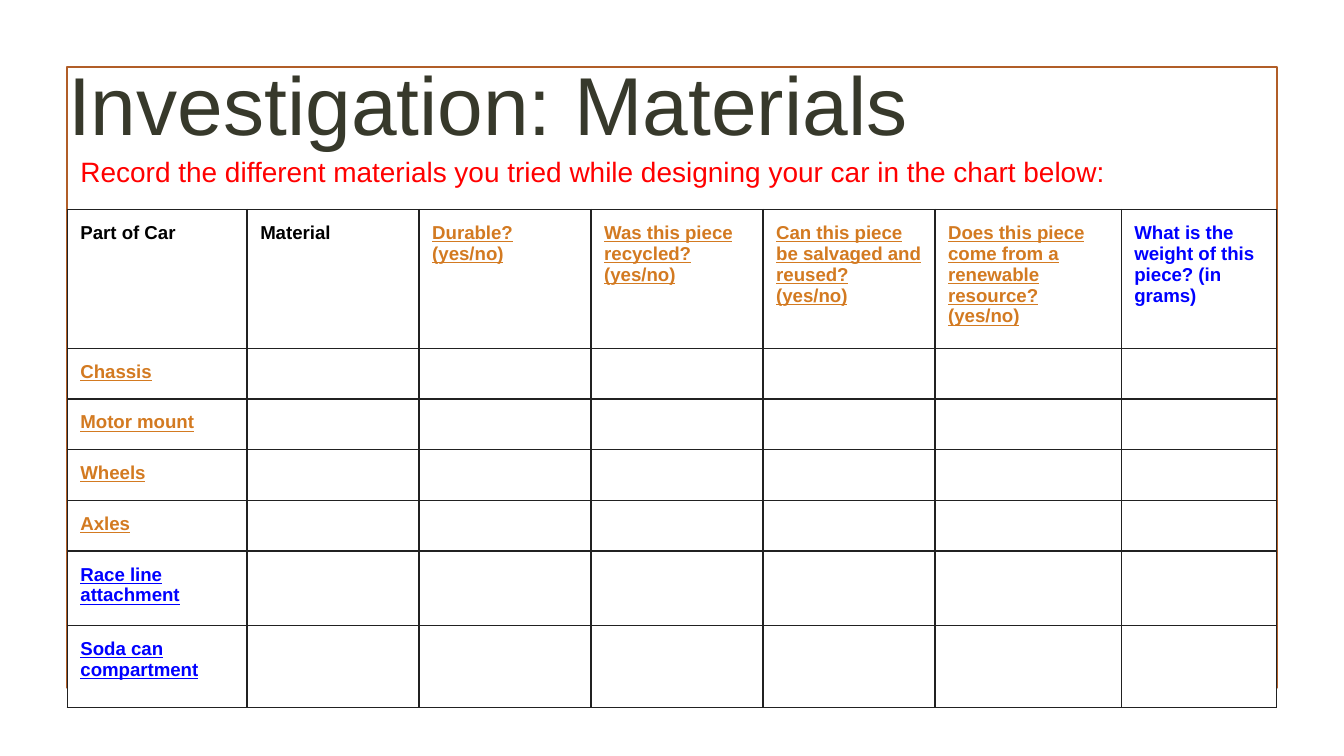
from pptx import Presentation
from pptx.dml.color import RGBColor
from pptx.enum.shapes import MSO_SHAPE
from pptx.enum.text import MSO_ANCHOR
from pptx.oxml import parse_xml
from pptx.oxml.ns import nsdecls
from pptx.util import Cm, Pt

WHITE = RGBColor(0xFF, 0xFF, 0xFF)
BLACK = RGBColor(0, 0, 0)
RUST = RGBColor(0xB1, 0x5E, 0x28)
OLIVE = RGBColor(0x37, 0x39, 0x2B)
RED = RGBColor(0xFF, 0, 0)
AMBER = RGBColor(0xD3, 0x7A, 0x21)
BLUE = RGBColor(0, 0, 0xFF)
GRID = RGBColor(0x21, 0x21, 0x21)

FONT = "Arial"
PAD = 0.25
COLS = [3.4, 3.25, 3.25, 3.25, 3.25, 3.52, 2.94]
ROWS = [2.26, 0.96, 0.96, 0.96, 0.96, 1.4, 1.56]
HEADS = [
    ("Part of Car", BLACK, False),
    ("Material", BLACK, False),
    ("Durable? (yes/no)", AMBER, True),
    ("Was this piece recycled? (yes/no)", AMBER, True),
    ("Can this piece be salvaged and reused? (yes/no)", AMBER, True),
    ("Does this piece come from a renewable resource? (yes/no)", AMBER, True),
    ("What is the weight of this piece? (in grams)", BLUE, False),
]
PARTS = [
    ("Chassis", AMBER, True),
    ("Motor mount", AMBER, True),
    ("Wheels", AMBER, True),
    ("Axles", AMBER, True),
    ("Race line attachment", BLUE, True),
    ("Soda can compartment", BLUE, True),
]


def style(para, size, color, bold=False, under=False):
    """Set the font of one paragraph."""
    font = para.font
    font.name, font.size = FONT, Pt(size)
    font.bold, font.underline = bold, under
    font.color.rgb = color


def pad(item):
    """Give a cell or text frame the same inset on every side."""
    item.margin_left = item.margin_right = Cm(PAD)
    item.margin_top = item.margin_bottom = Cm(PAD)


def add_frame(slide, left, top, width, height):
    """Draw the thin outline behind the content."""
    frame = slide.shapes.add_shape(
        MSO_SHAPE.RECTANGLE, Cm(left), Cm(top), Cm(width), Cm(height))
    frame.shadow.inherit = False
    frame.fill.background()
    frame.line.color.rgb = RUST
    frame.line.width = Pt(1.25)


def add_text(slide, left, top, width, height, text, size, color, anchor):
    """Place one line of text in the given box."""
    box = slide.shapes.add_textbox(Cm(left), Cm(top), Cm(width), Cm(height))
    body = box.text_frame
    body.word_wrap = True
    body.vertical_anchor = anchor
    pad(body)
    para = body.paragraphs[0]
    para.text = text
    style(para, size, color)


def add_edges(cell):
    """Draw the four borders of a cell, ahead of its fill."""
    props = cell._tc.get_or_add_tcPr()
    for spot, side in enumerate(("lnL", "lnR", "lnT", "lnB")):
        props.insert(spot, parse_xml(
            f'<a:{side} {nsdecls("a")} w="{Pt(0.75)}"><a:solidFill>'
            f'<a:srgbClr val="{GRID}"/></a:solidFill></a:{side}>'))


def add_chart_table(slide, left, top, width, height):
    """Build the materials table with headings and car parts."""
    table = slide.shapes.add_table(
        len(ROWS), len(COLS), Cm(left), Cm(top), Cm(width), Cm(height)).table
    for col, size in zip(table.columns, COLS):
        col.width = Cm(size * width / sum(COLS))
    for row, size in zip(table.rows, ROWS):
        row.height = Cm(size * height / sum(ROWS))
    labels = {(0, col): head for col, head in enumerate(HEADS)}
    labels.update({(row, 0): part for row, part in enumerate(PARTS, 1)})
    for row in range(len(ROWS)):
        for col in range(len(COLS)):
            cell = table.cell(row, col)
            cell.fill.solid()
            cell.fill.fore_color.rgb = WHITE
            pad(cell)
            add_edges(cell)
            para = cell.text_frame.paragraphs[0]
            if (row, col) in labels:
                text, color, under = labels[row, col]
                para.text = text
                style(para, 10, color, True, under)
            else:
                para._p.get_or_add_endParaRPr().set("sz", "1000")


def main():
    """Build the slide and save it."""
    deck = Presentation()
    deck.slide_width, deck.slide_height = Cm(25.4), Cm(14.29)
    slide = deck.slides.add_slide(deck.slide_layouts[6])
    add_frame(slide, 1.27, 1.27, 22.86, 11.73)
    add_text(slide, 1.04, 1.32, 20.32, 1.8, "Investigation: Materials",
             44, OLIVE, MSO_ANCHOR.BOTTOM)
    add_text(slide, 1.27, 2.67, 21.44, 1.3,
             "Record the different materials you tried while designing "
             "your car in the chart below:", 15, RED, MSO_ANCHOR.TOP)
    add_chart_table(slide, 1.27, 3.96, 22.86, 9.06)
    deck.save("out.pptx")


if __name__ == "__main__":
    main()
